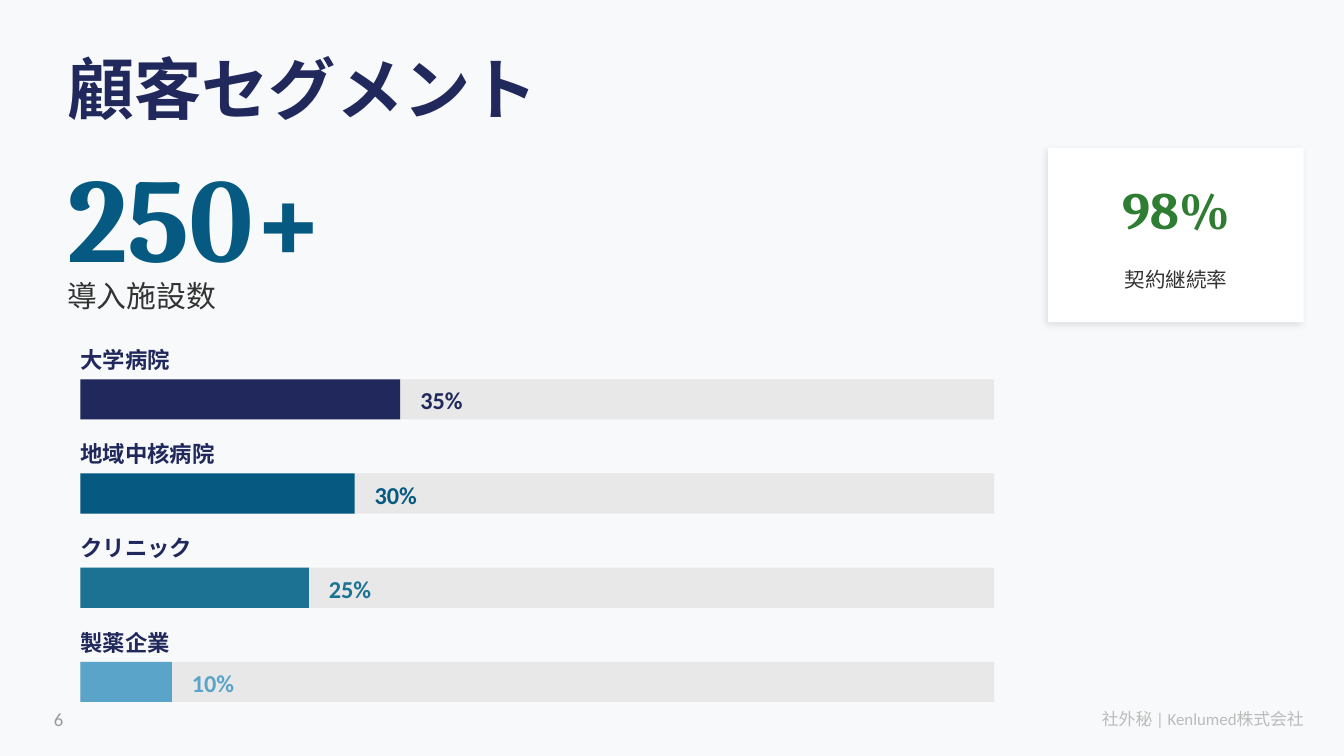
from typing import NamedTuple

from lxml.etree import SubElement
from pptx import Presentation
from pptx.dml.color import RGBColor
from pptx.enum.shapes import MSO_SHAPE as Shape
from pptx.enum.text import MSO_ANCHOR as Anchor, MSO_AUTO_SIZE as Auto, PP_ALIGN as Align
from pptx.oxml.ns import qn
from pptx.util import Cm, Pt

NAVY, TEAL, GREY, TRACK = "21295C", "065A82", "333333", "E8E8E8"
HEAD, BODY = "Cambria", "Calibri"


class Box(NamedTuple):
    left: float
    top: float
    width: float
    height: float

    def lengths(self):
        return [Cm(side) for side in self]


class Style(NamedTuple):
    size: float
    color: str
    font: str = BODY
    bold: bool = False
    align: Align = Align.LEFT


class Segment(NamedTuple):
    name: str
    share: int
    color: str


def rgb(color: str) -> RGBColor:
    return RGBColor.from_string(color)


def set_text(shape, text: str, style: Style) -> None:
    frame = shape.text_frame
    frame.text = text
    frame.word_wrap = True
    frame.auto_size = Auto.NONE
    frame.vertical_anchor = Anchor.MIDDLE
    frame.margin_left = frame.margin_right = 0
    frame.margin_top = frame.margin_bottom = 0
    para = frame.paragraphs[0]
    para.alignment = style.align
    font = para.runs[0].font
    font.size, font.name, font.bold = Pt(style.size), style.font, style.bold
    font.color.rgb = rgb(style.color)


def add_text(slide, box: Box, text: str, style: Style) -> None:
    set_text(slide.shapes.add_textbox(*box.lengths()), text, style)


def add_rect(slide, box: Box, color: str):
    rect = slide.shapes.add_shape(Shape.RECTANGLE, *box.lengths())
    rect.shadow.inherit = False
    rect.fill.solid()
    rect.fill.fore_color.rgb = rgb(color)
    rect.line.fill.background()
    return rect


def add_shade(shape) -> None:
    """Give a shape a soft shadow towards the lower left."""
    effects = shape.element.spPr.find(qn("a:effectLst"))
    shade = SubElement(effects, qn("a:outerShdw"), blurRad=str(Pt(4)), dist=str(Pt(2)),
                       dir=str(135 * 60000), algn="bl", rotWithShape="0")
    color = SubElement(shade, qn("a:srgbClr"), val="000000")
    SubElement(color, qn("a:alpha"), val="10000")


def add_bar(slide, seg: Segment, top: float) -> None:
    left, full, high, gap = 1.52, 17.27, 0.76, 0.38
    part = full * seg.share / 100
    add_text(slide, Box(left, top, 6.35, 0.64), seg.name, Style(12, NAVY, bold=True))
    for width, color in ((full, TRACK), (part, seg.color)):
        add_rect(slide, Box(left, top + 0.69, width, high), color)
    add_text(slide, Box(left + part + gap, top + 0.64, 1.52, 0.89),
             f"{seg.share}%", Style(13, seg.color, bold=True))


def main() -> None:
    deck = Presentation()
    deck.slide_width, deck.slide_height = Cm(25.4), Cm(14.29)
    slide = deck.slides.add_slide(deck.slide_layouts[5])
    slide.background.fill.solid()
    slide.background.fill.fore_color.rgb = rgb("F8F9FA")

    # Title
    title = slide.shapes.title
    title.left, title.top, title.width, title.height = Box(1.27, 0.76, 22.86, 1.78).lengths()
    set_text(title, "顧客セグメント", Style(36, NAVY, HEAD, True))

    # Headline figure
    add_text(slide, Box(1.27, 2.79, 8.89, 2.54), "250+", Style(64, TEAL, HEAD, True))
    add_text(slide, Box(1.27, 5.08, 8.89, 1.02), "導入施設数", Style(16, GREY))

    # Segment bars
    segments = [
        Segment("大学病院", 35, NAVY),
        Segment("地域中核病院", 30, TEAL),
        Segment("クリニック", 25, "1C7293"),
        Segment("製薬企業", 10, "5BA4C9"),
    ]
    for row, seg in enumerate(segments):
        add_bar(slide, seg, 6.48 + row * 1.78)

    # Renewal card
    left, width = 19.81, 4.83
    add_shade(add_rect(slide, Box(left, 2.79, width, 3.3), "FFFFFF"))
    add_text(slide, Box(left, 3.05, width, 1.78), "98%",
             Style(28, "2E7D32", HEAD, True, Align.CENTER))
    add_text(slide, Box(left, 4.83, width, 0.89), "契約継続率",
             Style(11, GREY, align=Align.CENTER))

    # Footer
    add_text(slide, Box(1.02, 13.21, 1.27, 0.76), "6", Style(10, "999999"))
    add_text(slide, Box(17.78, 13.21, 6.86, 0.76), "社外秘 | Kenlumed株式会社",
             Style(9, "BBBBBB", align=Align.RIGHT))

    deck.save("out.pptx")


if __name__ == "__main__":
    main()
